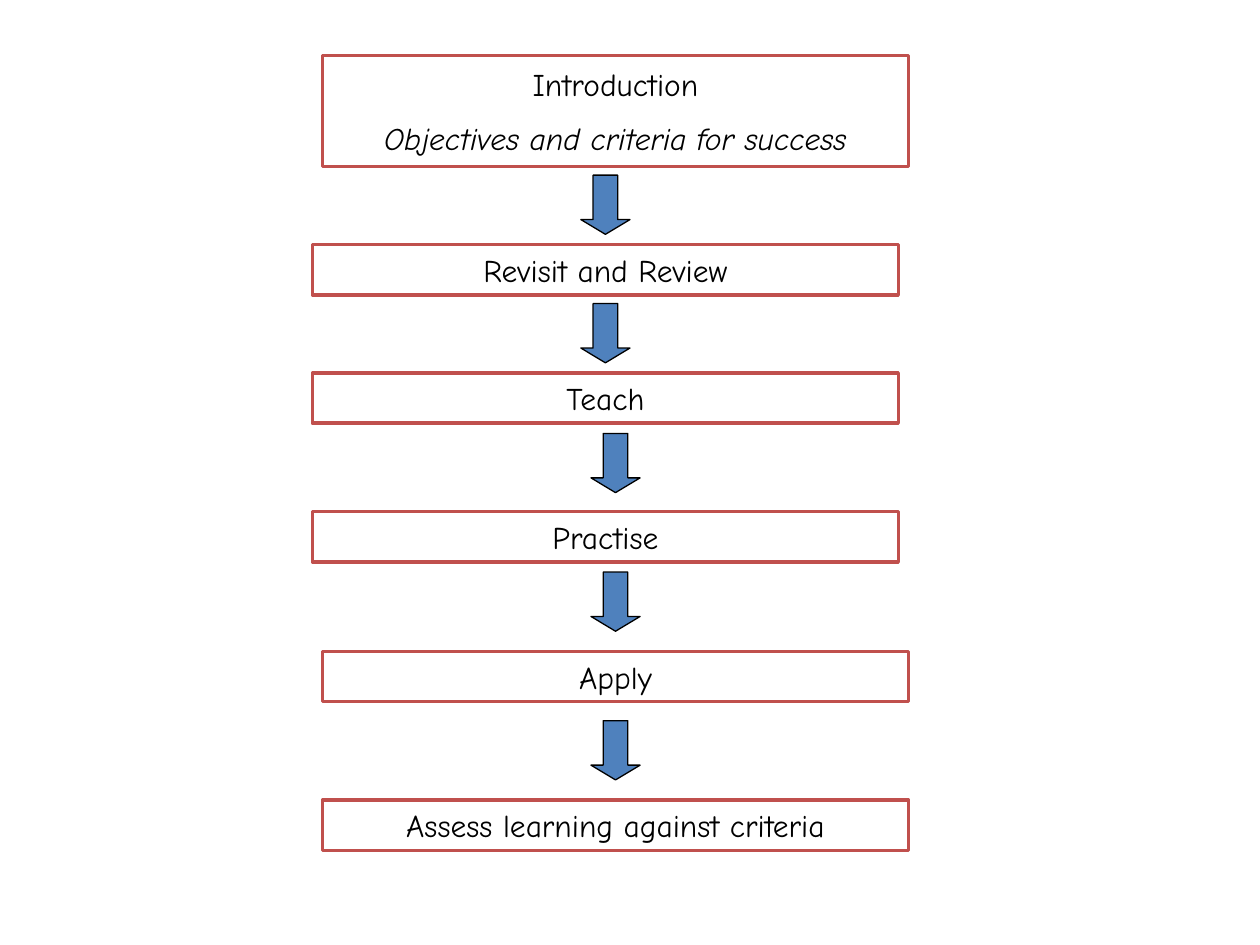
"""Build a lesson-sequence flow chart: six boxes joined by down arrows."""
from pptx import Presentation
from pptx.dml.color import RGBColor
from pptx.enum.shapes import MSO_SHAPE as Shape
from pptx.enum.text import MSO_ANCHOR as Anchor, PP_ALIGN as Align
from pptx.util import Inches, Pt

COLS, ROWS = 1000, 750
BOX_W, BOX_H, INTRO_H = 465, 40, 88
ARROW_W, ARROW_H = 39, 47
LEFT, RIGHT = 248, 256
ARROW_LEFT, ARROW_RIGHT = 461, 469
FONT = {"name": "Comic Neue", "size": Pt(18)}
PARAGRAPH = {"alignment": Align.CENTER, "space_before": Pt(9)}

prs = Presentation()
prs.slide_width, prs.slide_height = Inches(10), Inches(7.5)
cell_w, cell_h = prs.slide_width // COLS, prs.slide_height // ROWS
s = prs.slides.add_slide(prs.slide_layouts[6])


def color(value):
    return RGBColor.from_string(value)


def add(kind, col, row, cols, rows, line, width):
    sp = s.shapes.add_shape(kind, col * cell_w, row * cell_h, cols * cell_w, rows * cell_h)
    sp.shadow.inherit = False
    sp.line.color.rgb = color(line)
    sp.line.width = Pt(width)
    return sp


steps = [
    (RIGHT, 44, INTRO_H, ["Introduction", "Objectives and criteria for success"]),
    (LEFT, 194, BOX_H, ["Revisit and Review"]),
    (LEFT, 296, BOX_H, ["Teach"]),
    (LEFT, 406, BOX_H, ["Practise"]),
    (RIGHT, 517, BOX_H, ["Apply"]),
    (RIGHT, 635, BOX_H, ["Assess learning against criteria"]),
]
for col, row, rows, lines in steps:
    sp = add(Shape.RECTANGLE, col, row, BOX_W, rows, "C0504D", 2)
    sp.fill.background()
    tf = sp.text_frame
    tf.word_wrap = True
    tf.vertical_anchor = Anchor.MIDDLE
    for i, text in enumerate(lines):
        p = tf.add_paragraph() if i else tf.paragraphs[0]
        for key, value in PARAGRAPH.items():
            setattr(p, key, value)
        r = p.add_run()
        r.text = text
        for key, value in FONT.items():
            setattr(r.font, key, value)
        r.font.color.rgb = color("000000")
        if i:
            r.font.italic = True

arrows = [(ARROW_LEFT, 139), (ARROW_LEFT, 241), (ARROW_RIGHT, 344),
          (ARROW_RIGHT, 454), (ARROW_RIGHT, 572)]
for col, row in arrows:
    sp = add(Shape.DOWN_ARROW, col, row, ARROW_W, ARROW_H, "000000", 0.75)
    sp.fill.solid()
    sp.fill.fore_color.rgb = color("4F81BD")
    sp.adjustments[0], sp.adjustments[1] = 0.5, 0.3

prs.save("out.pptx")
